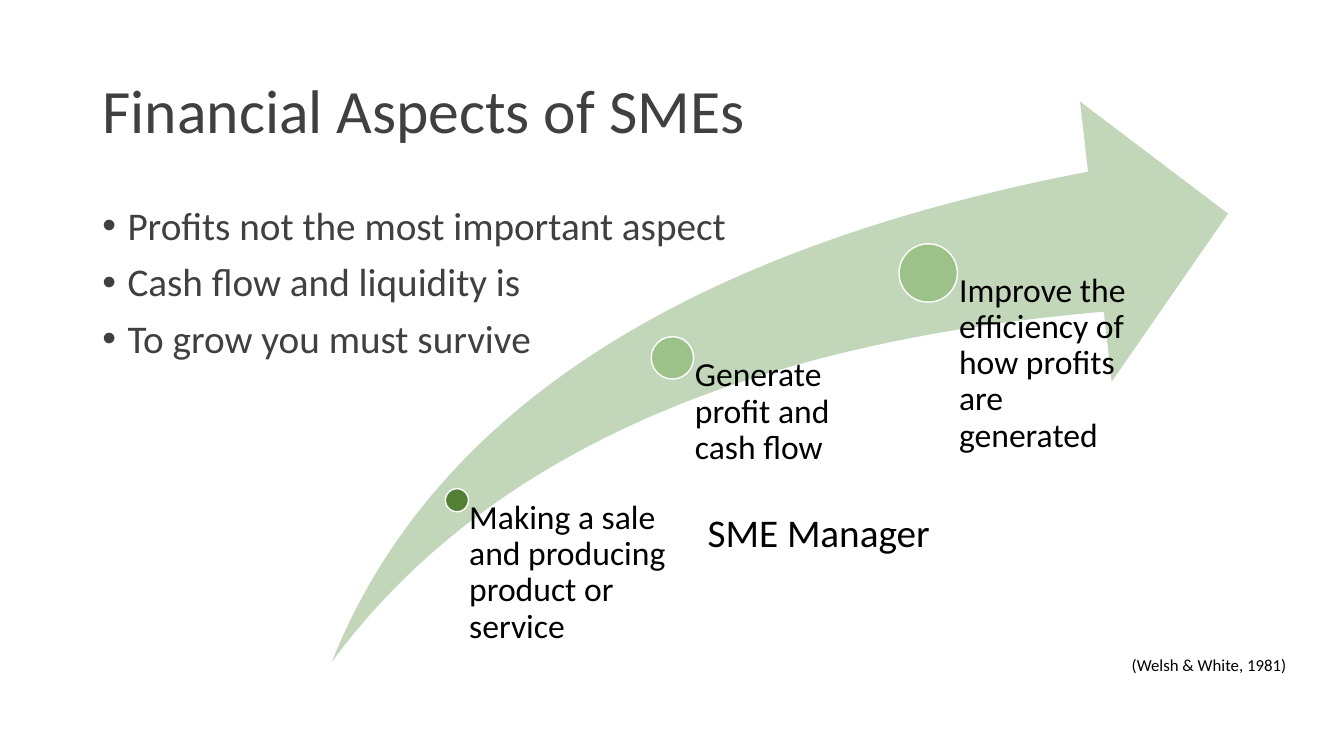
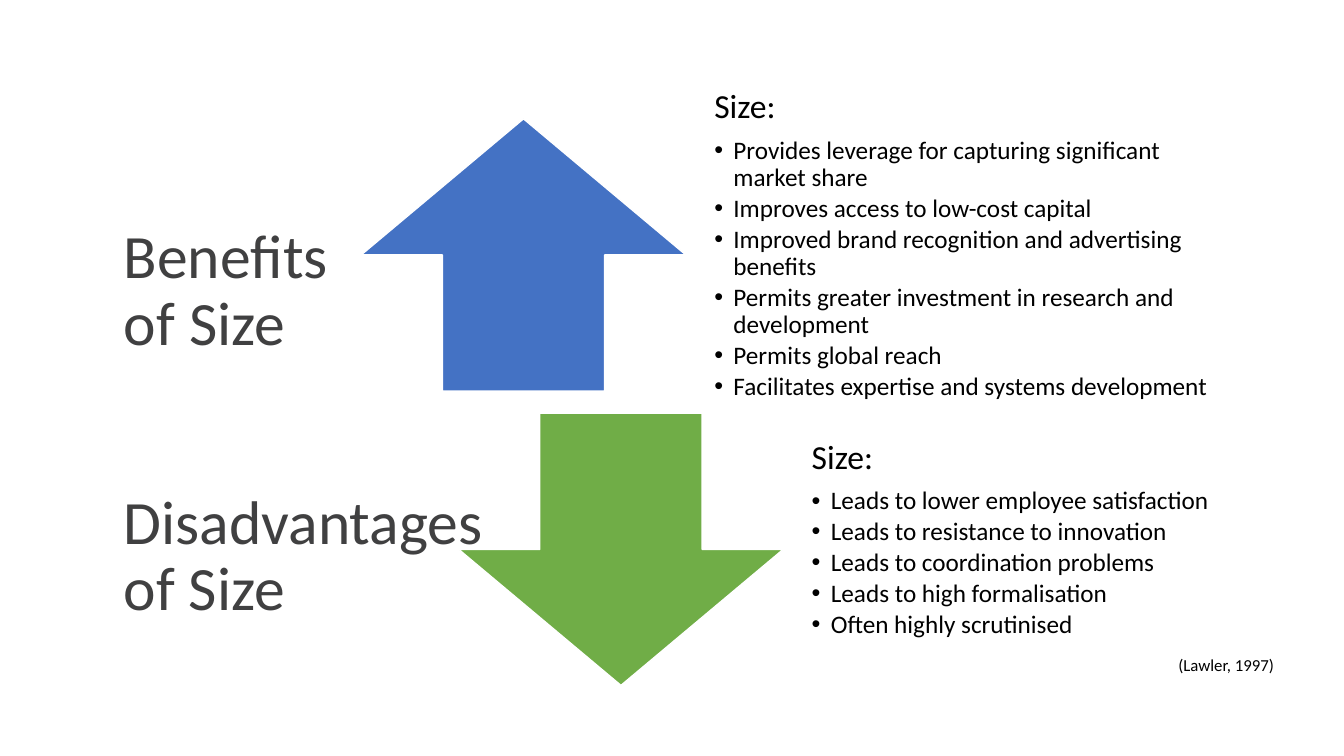
from dataclasses import dataclass

from lxml.etree import SubElement
from pptx import Presentation
from pptx.dml.color import RGBColor as Rgb
from pptx.enum.shapes import MSO_SHAPE as Shape
from pptx.enum.text import MSO_ANCHOR as Anchor, MSO_AUTO_SIZE as AutoSize, PP_ALIGN as Align
from pptx.oxml.ns import qn
from pptx.util import Inches, Pt

COLUMNS, ROWS = 32, 18
TITLE_ONLY = 5


@dataclass(frozen=True)
class Theme:
    font: str = "Calibri"
    heading: str = "404041"
    text: str = "000000"
    outline: str = "FFFFFF"
    swoosh: str = "C2D7B9"
    dark_dot: str = "538035"
    light_dot: str = "9CC189"
    up: str = "4472C4"
    down: str = "70AD47"
    title_size: int = 44
    body_size: int = 28
    label_size: int = 24
    point_size: int = 18
    citation_size: int = 12
    line_spacing: float = 0.9


@dataclass(frozen=True)
class Line:
    """One paragraph; indent is the bullet's hanging indent in inches."""
    text: str
    size: int
    color: str
    indent: float = 0
    before: float = 0
    after: float = 0
    spacing: float = Theme.line_spacing


class SlideBuilder:
    def __init__(self, theme):
        self.theme = theme
        self.deck = Presentation()
        self.deck.slide_width, self.deck.slide_height = Inches(13.33), Inches(7.5)
        self.slide = None

    def area(self, left, top, width, height):
        """Turn grid columns and rows into slide lengths."""
        column = self.deck.slide_width / COLUMNS
        row = self.deck.slide_height / ROWS
        return [round(n * unit) for n, unit in zip((left, top, width, height), (column, row) * 2)]

    def new_slide(self, title, place):
        self.slide = self.deck.slides.add_slide(self.deck.slide_layouts[TITLE_ONLY])
        box = self.slide.shapes.title
        box.left, box.top, box.width, box.height = self.area(*place)
        self.fill_heading(box, title)

    def fill_heading(self, box, text):
        theme = self.theme
        self.set_lines(box, [Line(text, theme.title_size, theme.heading)], Anchor.MIDDLE)

    def heading(self, text, place):
        self.fill_heading(self.slide.shapes.add_textbox(*self.area(*place)), text)

    def text(self, lines, place, anchor=Anchor.TOP, insets=None):
        box = self.slide.shapes.add_textbox(*self.area(*place))
        self.set_lines(box, lines, anchor, insets)
        return box

    def caption(self, text, place, size):
        """Add a single line whose box grows with its text."""
        box = self.text([Line(text, size, self.theme.text, spacing=1)], place)
        box.text_frame.word_wrap = False
        box.text_frame.auto_size = AutoSize.SHAPE_TO_FIT_TEXT

    def citation(self, text, left, width):
        self.caption(text, (left, 15.48, width, 0.72), self.theme.citation_size)

    def set_lines(self, box, lines, anchor, insets=None):
        frame = box.text_frame
        frame.word_wrap = True
        frame.auto_size = AutoSize.NONE
        frame.vertical_anchor = anchor
        if insets:
            (frame.margin_left, frame.margin_top,
             frame.margin_right, frame.margin_bottom) = map(Inches, insets)
        for index, line in enumerate(lines):
            para = frame.add_paragraph() if index else frame.paragraphs[0]
            if line.indent:
                self.add_bullet(para, line.indent)
            para.alignment = Align.LEFT
            para.line_spacing = line.spacing
            para.space_before = Pt(line.before if index else 0)
            para.space_after = Pt(line.after)
            span = para.add_run()
            span.text = line.text
            span.font.name = self.theme.font
            span.font.size = Pt(line.size)
            span.font.color.rgb = Rgb.from_string(line.color)

    @staticmethod
    def add_bullet(para, indent):
        properties = para._p.get_or_add_pPr()
        properties.set("marL", str(Inches(indent)))
        properties.set("indent", str(-Inches(indent)))
        SubElement(properties, qn("a:buFont")).set("typeface", "Arial")
        SubElement(properties, qn("a:buChar")).set("char", "•")

    def shape(self, kind, place, fill, outlined=True):
        shape = self.slide.shapes.add_shape(kind, *self.area(*place))
        shape.shadow.inherit = False
        shape.fill.solid()
        shape.fill.fore_color.rgb = Rgb.from_string(fill)
        if outlined:
            shape.line.color.rgb = Rgb.from_string(self.theme.outline)
            shape.line.width = Pt(1)
        else:
            shape.line.fill.background()
        return shape

    def milestone(self, text, center, diameter, width, bottom, fill):
        """Add a dot with a label whose top left corner is the dot's center."""
        x, y = center
        self.shape(Shape.OVAL, (x - diameter / 2, y - diameter / 2, diameter, diameter), fill)
        cell = self.deck.slide_width.inches / COLUMNS
        label = Line(text, self.theme.label_size, self.theme.text)
        self.text([label], (x, y, width, bottom - y), insets=(0.53 * diameter * cell, 0, 0, 0))

    def arrow_list(self, kind, fill, left, top, title, points):
        """Add a block arrow with a titled bullet list to its right."""
        theme, height = self.theme, 6.48
        self.shape(kind, (left, top, 7.73, height), fill)
        lines = [Line(title, theme.label_size, theme.text, after=0.35 * theme.label_size)]
        lines += [Line(point, theme.point_size, theme.text, indent=0.19,
                       after=0.15 * theme.point_size) for point in points]
        self.text(lines, (left + 7.95, top, 13.1, height), Anchor.MIDDLE, (0.19, 0, 0.19, 0.19))


def financial_aspects(builder):
    theme = builder.theme
    left, width = 2.2, 27.6
    builder.new_slide("Financial Aspects of SMEs", (left, 0.96, width, 3.48))
    points = ("Profits not the most important aspect", "Cash flow and liquidity is",
              "To grow you must survive")
    builder.text([Line(point, theme.body_size, theme.heading, indent=0.25, before=10)
                  for point in points], (left, 4.8, width, 11.42))
    builder.citation("(Welsh & White, 1981)", 26.71, 4.3)

    swoosh_top, swoosh_height = 2.42, 13.34
    swoosh = builder.shape(Shape.SWOOSH_ARROW, (7.9, swoosh_top, 21.34, swoosh_height),
                           theme.swoosh, outlined=False)
    swoosh.adjustments[0] = swoosh.adjustments[1] = 0.25
    milestones = (
        ("Making a sale and producing product or service",
         (10.88, 11.91), 0.55, 4.97, theme.dark_dot),
        ("Generate profit and cash flow", (16.01, 8.52), 1.01, 5.11, theme.light_dot),
        ("Improve the efficiency of how profits are generated",
         (22.1, 6.5), 1.39, 5.11, theme.light_dot),
    )
    for text, center, diameter, label_width, fill in milestones:
        builder.milestone(text, center, diameter, label_width, swoosh_top + swoosh_height, fill)
    builder.caption("SME Manager", (16.61, 11.98, 5.83, 1.37), theme.body_size)


def effects_of_size(builder):
    theme = builder.theme
    left, height = 2.71, 3.48
    builder.new_slide("Benefits of Size", (left, 5.21, 6.24, height))
    builder.citation("(Lawler, 1997)", 27.82, 2.78)
    builder.arrow_list(Shape.UP_ARROW, theme.up, 8.6, 2.83, "Size:", (
        "Provides leverage for capturing significant market share",
        "Improves access to low-cost capital",
        "Improved brand recognition and advertising benefits",
        "Permits greater investment in research and development",
        "Permits global reach",
        "Facilitates expertise and systems development",
    ))
    builder.arrow_list(Shape.DOWN_ARROW, theme.down, 10.92, 9.84, "Size:", (
        "Leads to lower employee satisfaction",
        "Leads to resistance to innovation",
        "Leads to coordination problems",
        "Leads to high formalisation",
        "Often highly scrutinised",
    ))
    builder.heading("Disadvantages of Size", (left, 11.54, 9.1, height))


def main():
    builder = SlideBuilder(Theme())
    financial_aspects(builder)
    effects_of_size(builder)
    builder.deck.save("out.pptx")


if __name__ == "__main__":
    main()
